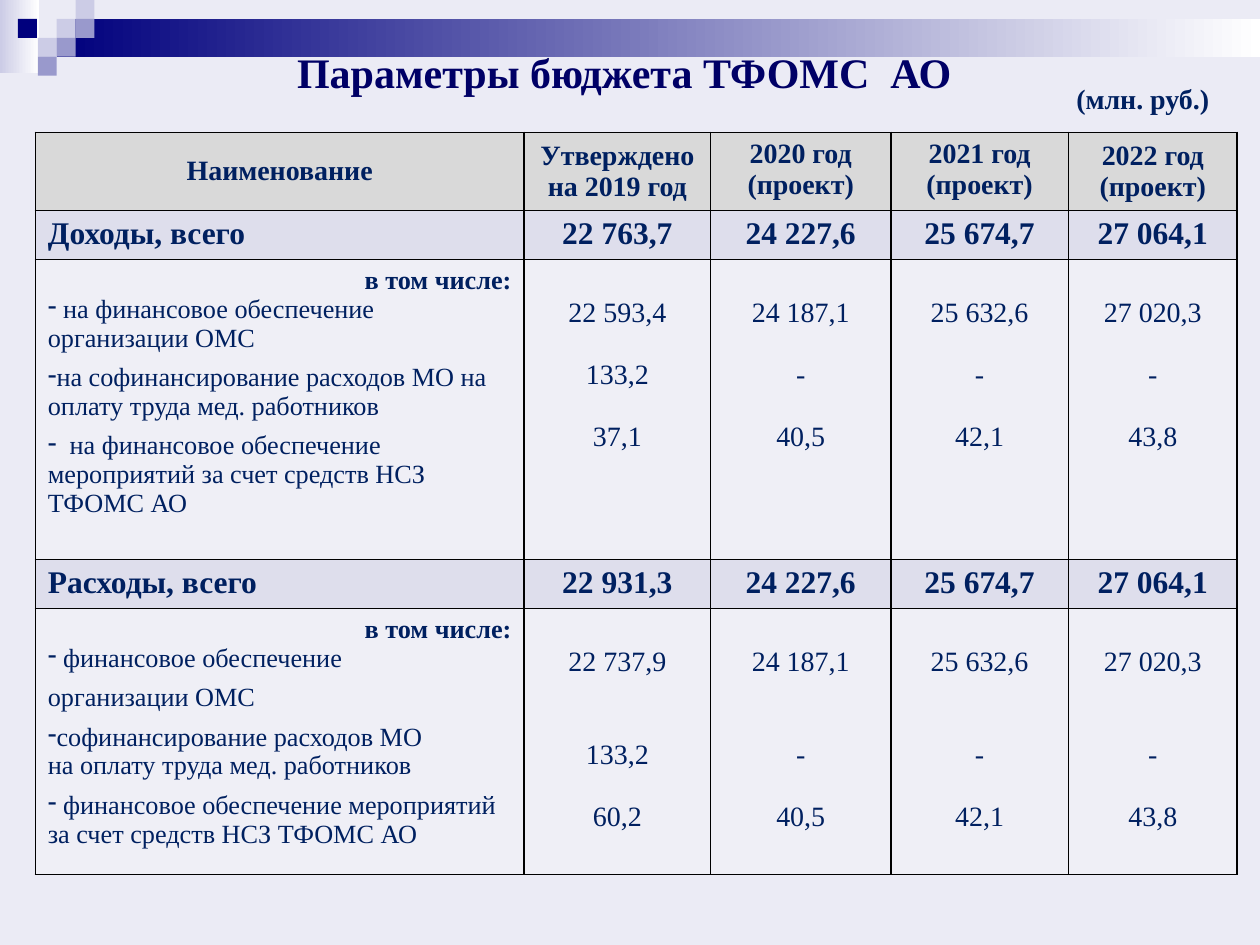
import pptx
import pptx.util
import pptx.dml.color
import pptx.enum.shapes
import pptx.enum.text
import lxml.etree
from pptx.util import Inches

COLORS = {
    "background": "EBEBF5", "navy": "00007D", "lavender": "CCCCE6", "violet": "9999CC",
    "white": "FFFFFF", "title": "000066", "text": "002060", "border": "000000",
    "header": "D9D9D9", "total": "DEDEEC", "detail": "EFEFF6",
}
FONT = "Times New Roman"
ALIGN = pptx.enum.text.PP_ALIGN
ANCHOR = pptx.enum.text.MSO_ANCHOR
DRAWING = "http://schemas.openxmlformats.org/drawingml/2006/main"

COLUMN_WIDTHS = [3.88, 1.48, 1.43, 1.41, 1.34]
ROW_HEIGHTS = [0.62, 0.39, 2.38, 0.39, 2.11]
HEADERS = ["Наименование", "Утверждено\nна 2019 год", "2020 год (проект)",
           "2021 год (проект)", "2022 год (проект)"]
HEADER_ANCHORS = [ANCHOR.MIDDLE, ANCHOR.MIDDLE, ANCHOR.TOP, ANCHOR.TOP, ANCHOR.MIDDLE]
LINE = 17.7  # height of one line of figures, in points

# Each section: total row, (has dash, text) items, columns of figures, spacing before figures
SECTIONS = [
    (["Доходы, всего", "22 763,7", "24 227,6", "25 674,7", "27 064,1"],
     [(True, " на финансовое обеспечение\vорганизации ОМС"),
      (True, "на софинансирование расходов МО на оплату труда мед. работников"),
      (True, "  на финансовое обеспечение мероприятий за счет средств НСЗ ТФОМС АО")],
     [["22 593,4", "133,2", "37,1"], ["24 187,1", "-", "40,5"],
      ["25 632,6", "-", "42,1"], ["27 020,3", "-", "43,8"]],
     [0, LINE, LINE]),
    (["Расходы, всего", "22 931,3", "24 227,6", "25 674,7", "27 064,1"],
     [(True, " финансовое обеспечение"),
      (False, "организации ОМС"),
      (True, "софинансирование расходов МО\vна оплату труда мед. работников"),
      (True, " финансовое обеспечение мероприятий за счет средств НСЗ ТФОМС АО")],
     [["22 737,9", "133,2", "60,2"], ["24 187,1", "-", "40,5"],
      ["25 632,6", "-", "42,1"], ["27 020,3", "-", "43,8"]],
     [0, 2 * LINE, LINE]),
]


def rgb(name):
    return pptx.dml.color.RGBColor.from_string(COLORS[name])


def set_values(target, **values):
    for name, value in values.items():
        setattr(target, name, value)


def write_paragraph(paragraph, text, size, bold=True, color="text", **layout):
    paragraph.text = text
    set_values(paragraph, **layout)
    for run in paragraph.runs:
        set_values(run.font, name=FONT, size=pptx.util.Pt(size), bold=bold)
        run.font.color.rgb = rgb(color)


def next_paragraph(frame, index):
    return frame.add_paragraph() if index else frame.paragraphs[0]


def add_dash(paragraph):
    properties = paragraph._p.get_or_add_pPr()
    properties.set("marL", "0")
    properties.set("indent", "0")
    lxml.etree.SubElement(properties, f"{{{DRAWING}}}buChar", char="-")


def format_cell(cell, fill, **values):
    """Draw the four borders, then the fill, and set anchor and margins."""
    properties = cell._tc.get_or_add_tcPr()
    for side in ("lnL", "lnR", "lnT", "lnB"):
        line = lxml.etree.SubElement(properties, f"{{{DRAWING}}}{side}", w="12700")
        solid = lxml.etree.SubElement(line, f"{{{DRAWING}}}solidFill")
        lxml.etree.SubElement(solid, f"{{{DRAWING}}}srgbClr", val=COLORS["border"])
    cell.fill.solid()
    cell.fill.fore_color.rgb = rgb(fill)
    set_values(cell, **values)


def add_block(slide, left, top, width, height, *colors):
    """Add a plain rectangle, or a left-to-right gradient when two colours are given."""
    block = slide.shapes.add_shape(pptx.enum.shapes.MSO_SHAPE.RECTANGLE,
                                   Inches(left), Inches(top), Inches(width), Inches(height))
    block.shadow.inherit = False
    block.line.fill.background()
    if len(colors) == 1:
        block.fill.solid()
        block.fill.fore_color.rgb = rgb(colors[0])
        return
    block.fill.gradient()
    block.fill.gradient_angle = 0
    for position, (stop, color) in enumerate(zip(block.fill.gradient_stops, colors)):
        stop.position = position
        stop.color.rgb = rgb(color)


def add_banner(slide, left, top, width):
    add_block(slide, left, top, 0.31, 0.58, "lavender", "white")
    add_block(slide, left + 0.45, top + 0.15, width - 0.45, 0.3, "navy", "white")
    step = 0.15
    squares = [(3, 1, "lavender"), (4, 0, "lavender"), (4, 1, "violet"), (2, 2, "lavender"),
               (0.95, 1, "navy"), (3, 2, "violet"), (2, 3, "violet")]
    for column, row, color in squares:
        add_block(slide, left + column * step, top + row * step, step, step, color)


def add_title(slide, left, top, width, height):
    title = slide.shapes.title
    slide.shapes._spTree.append(title._element)  # in front of the banner
    set_values(title, left=Inches(left), top=Inches(top),
               width=Inches(width), height=Inches(height))
    set_values(title.text_frame, vertical_anchor=ANCHOR.MIDDLE, word_wrap=True,
               margin_top=Inches(0.09), margin_bottom=0)
    write_paragraph(title.text_frame.paragraphs[0], "Параметры бюджета ТФОМС  АО", 24,
                    color="title", alignment=ALIGN.CENTER)


def add_unit_label(slide, left, top, width, height):
    label = slide.shapes.add_textbox(Inches(left), Inches(top), Inches(width), Inches(height))
    label.text_frame.word_wrap = True
    write_paragraph(label.text_frame.paragraphs[0], "(млн. руб.)", 16, alignment=ALIGN.CENTER)


def fill_header(cells):
    for index, (cell, text, anchor) in enumerate(zip(cells, HEADERS, HEADER_ANCHORS)):
        format_cell(cell, "header", vertical_anchor=anchor)
        if 0 < index < 4:
            set_values(cell, margin_left=Inches(0.04), margin_right=Inches(0.04))
        for number, line in enumerate(text.split("\n")):
            write_paragraph(next_paragraph(cell.text_frame, number), line, 16,
                            alignment=ALIGN.CENTER)


def fill_totals(cells, texts):
    for index, (cell, text) in enumerate(zip(cells, texts)):
        format_cell(cell, "total")
        write_paragraph(cell.text_frame.paragraphs[0], text, 18,
                        alignment=ALIGN.CENTER if index else ALIGN.LEFT)


def fill_details(cells, items, figures, spacing):
    format_cell(cells[0], "detail")
    frame = cells[0].text_frame
    write_paragraph(frame.paragraphs[0], "в том числе:", 15, alignment=ALIGN.RIGHT)
    for has_dash, text in items:
        paragraph = frame.add_paragraph()
        write_paragraph(paragraph, text, 15, bold=False, alignment=ALIGN.LEFT,
                        space_after=pptx.util.Pt(6))
        if has_dash:
            add_dash(paragraph)
    for cell, values in zip(cells[1:], figures):
        format_cell(cell, "detail", margin_top=Inches(0.3))
        for index, (value, space) in enumerate(zip(values, spacing)):
            write_paragraph(next_paragraph(cell.text_frame, index), value, 16, bold=False,
                            alignment=ALIGN.CENTER, space_before=pptx.util.Pt(space))


def add_budget_table(slide, left, top):
    table = slide.shapes.add_table(
        len(ROW_HEIGHTS), len(COLUMN_WIDTHS), Inches(left), Inches(top),
        Inches(sum(COLUMN_WIDTHS)), Inches(sum(ROW_HEIGHTS))).table
    set_values(table, first_row=False, horz_banding=False)
    for column, width in zip(table.columns, COLUMN_WIDTHS):
        column.width = Inches(width)
    for row, height in zip(table.rows, ROW_HEIGHTS):
        row.height = Inches(height)
    rows = [list(row.cells) for row in table.rows]
    fill_header(rows[0])
    for index, (totals, items, figures, spacing) in enumerate(SECTIONS):
        fill_totals(rows[2 * index + 1], totals)
        fill_details(rows[2 * index + 2], items, figures, spacing)


def main():
    presentation = pptx.Presentation()
    set_values(presentation, slide_width=Inches(10), slide_height=Inches(7.5))
    slide = presentation.slides.add_slide(presentation.slide_layouts[5])
    slide.background.fill.solid()
    slide.background.fill.fore_color.rgb = rgb("background")
    add_banner(slide, 0, 0, 10)
    add_title(slide, 0.35, 0.29, 9.21, 0.47)
    add_budget_table(slide, 0.28, 1.05)
    add_unit_label(slide, 8.14, 0.6, 1.86, 0.37)
    presentation.save("out.pptx")


if __name__ == "__main__":
    main()
